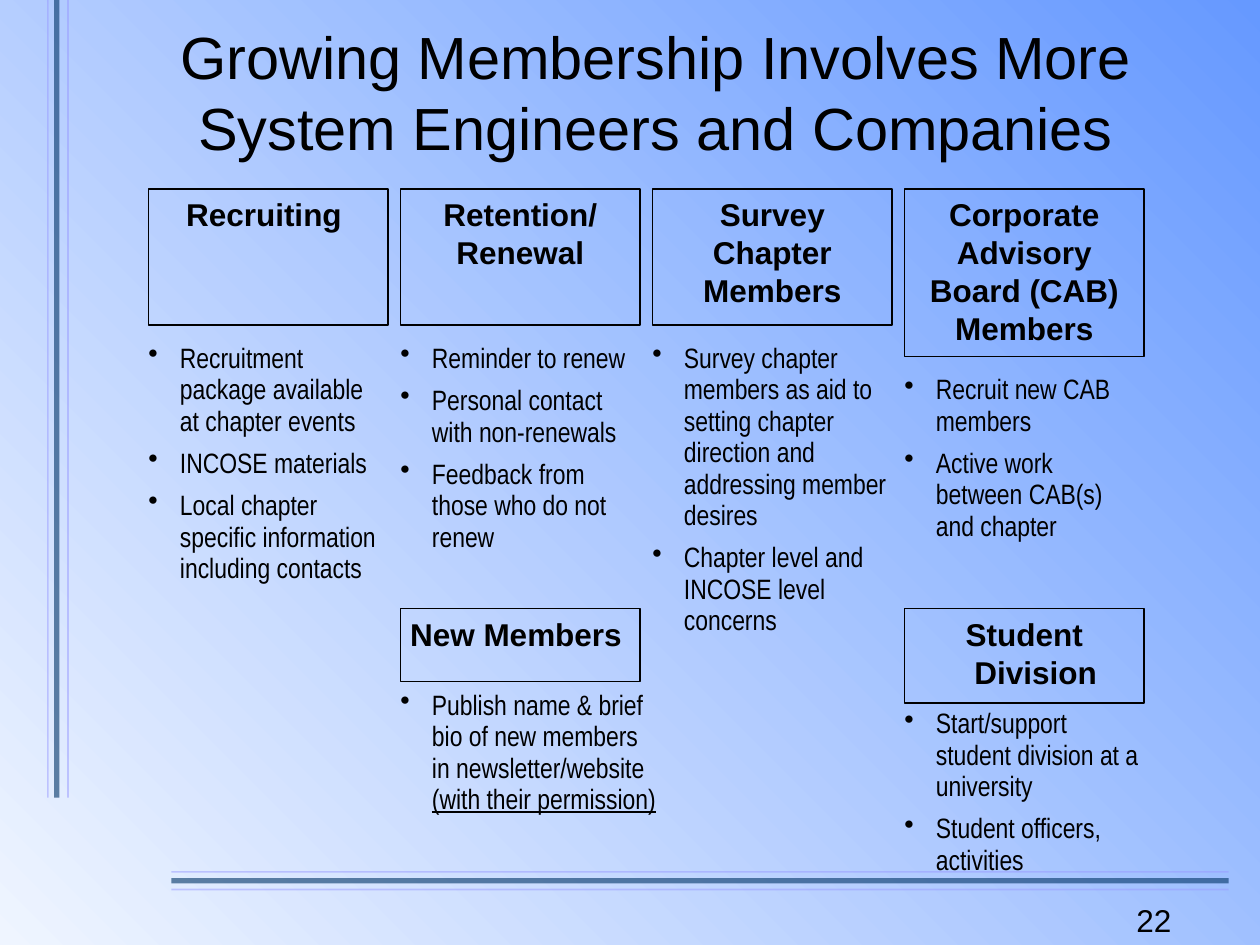
from lxml.etree import SubElement
from pptx import Presentation
from pptx.dml.color import RGBColor
from pptx.enum.shapes import MSO_CONNECTOR, MSO_SHAPE
from pptx.enum.text import MSO_ANCHOR, MSO_AUTO_SIZE, PP_ALIGN
from pptx.oxml.ns import qn
from pptx.util import Inches, Pt

TITLE = "Growing Membership Involves More System Engineers and Companies"
PAGE_NUMBER = "22"
BLACK = "000000"
PALE, DARK = ("9999FF", 1, 50), ("003366", 3, 60)
RULES = [
    ((0.38, 0), (0.38, 6.33), PALE),
    ((0.54, 0), (0.54, 6.33), PALE),
    ((0.45, 0), (0.45, 6.33), DARK),
    ((9.75, 7.06), (1.36, 7.06), PALE),
    ((9.75, 6.99), (1.36, 6.99), DARK),
    ((9.75, 6.92), (1.36, 6.92), PALE),
]
FIRST_LEFT, COLUMN_STEP, HEADING_WIDTH = 1.18, 2, 1.9
UPPER, LOWER = 1.5, 4.83
TOPICS = [
    dict(column=0, top=UPPER, height=1.08, heading="Recruiting ",
         list_top=2.67, list_size=(2.08, 2.04),
         points=[["Recruitment package available at chapter events"],
                 ["INCOSE materials"],
                 ["Local chapter specific information including contacts"]]),
    dict(column=1, top=UPPER, height=1.08, heading="Retention/ Renewal",
         list_top=2.67, list_size=(2.08, 1.78),
         points=[["Reminder to renew"],
                 ["Personal contact with non-renewals"],
                 ["Feedback from those who do not renew"]]),
    dict(column=2, top=UPPER, height=1.08, heading="Survey Chapter Members",
         list_top=2.67, list_size=(2.08, 2.43),
         points=[["Survey chapter members as aid to setting chapter direction "
                  "and addressing member desires"],
                 ["Chapter level and INCOSE level concerns"]]),
    dict(column=3, top=UPPER, height=1.33,
         heading="Corporate Advisory Board (CAB) Members",
         list_top=2.92, list_size=(2.08, 1.43),
         points=[["Recruit new CAB members"],
                 ["Active work between CAB(s) and chapter"]]),
    dict(column=1, top=LOWER, height=0.58, heading="New Members ",
         list_top=5.42, list_size=(2.25, 1.11),
         points=[["Publish name & brief bio of new members in newsletter/website ",
                  "(with their permission)"]]),
    dict(column=3, top=LOWER, height=0.75, heading="Student Division ",
         list_top=5.57, list_size=(2.08, 1.43),
         points=[["Start/support student division at a university"],
                 ["Student officers, activities"]]),
]


def rgb(value):
    """Turn a hex string into a colour."""
    return RGBColor.from_string(value)


def style(font, size, name="Arial", bold=False):
    """Set the look of a run."""
    font.size, font.name, font.bold = Pt(size), name, bold
    font.color.rgb = rgb(BLACK)


def hang(paragraph):
    """Give a paragraph a hanging indent."""
    properties = paragraph._p.get_or_add_pPr()
    properties.set("marL", str(Inches(0.25)))
    properties.set("indent", str(-Inches(0.25)))
    return properties


def add_rule(slide, start, end, pen):
    """Draw one translucent border line."""
    color, width, opacity = pen
    rule = slide.shapes.add_connector(
        MSO_CONNECTOR.STRAIGHT, *map(Inches, start + end))
    rule.line.color.rgb = rgb(color)
    rule.line.width = Pt(width)
    tint = rule._element.spPr.find(".//" + qn("a:srgbClr"))
    SubElement(tint, qn("a:alpha"), val=str(opacity * 1000))
    SubElement(rule._element.spPr, qn("a:effectLst"))


def add_text(slide, place, text, size):
    """Add a wrapping text box with one paragraph."""
    frame = slide.shapes.add_textbox(*map(Inches, place)).text_frame
    frame.word_wrap = True
    frame.text = text
    style(frame.paragraphs[0].runs[0].font, size)
    return frame


def add_heading(slide, place, text, hanging):
    """Add an outlined heading box."""
    heading = slide.shapes.add_shape(MSO_SHAPE.RECTANGLE, *map(Inches, place))
    heading.shadow.inherit = False
    heading.fill.background()
    heading.line.color.rgb = rgb(BLACK)
    heading.line.width = Pt(0.75)
    frame = heading.text_frame
    frame.word_wrap = True
    frame.vertical_anchor = MSO_ANCHOR.TOP
    frame.margin_left = frame.margin_right = Inches(0.05)
    frame.margin_top = frame.margin_bottom = Inches(0.05)
    frame.text = text
    paragraph = frame.paragraphs[0]
    paragraph.alignment = PP_ALIGN.CENTER
    if hanging:
        hang(paragraph)
    style(paragraph.runs[0].font, 18, bold=True)


def add_points(slide, place, points):
    """Add a bulleted list whose second runs are underlined."""
    frame = slide.shapes.add_textbox(*map(Inches, place)).text_frame
    frame.word_wrap = True
    frame.auto_size = MSO_AUTO_SIZE.SHAPE_TO_FIT_TEXT
    for index, parts in enumerate(points):
        paragraph = frame.add_paragraph() if index else frame.paragraphs[0]
        paragraph.line_spacing = Pt(18)
        paragraph.space_after = Pt(6)
        SubElement(hang(paragraph), qn("a:buChar"), char="•")
        for position, part in enumerate(parts):
            run = paragraph.add_run()
            run.text = part
            style(run.font, 16, "Arial Narrow")
            if position:
                run.font.underline = True


def main():
    """Build the membership slide."""
    deck = Presentation()
    deck.slide_width, deck.slide_height = Inches(10), Inches(7.5)
    slide = deck.slides.add_slide(deck.slide_layouts[6])
    backdrop = slide.background.fill
    backdrop.gradient()
    backdrop.gradient_angle = 45
    for stop, color in zip(backdrop.gradient_stops, ("EFF5FF", "6699FF")):
        stop.color.rgb = rgb(color)

    for start, end, pen in RULES:
        add_rule(slide, start, end, pen)
    add_text(slide, (8.92, 7.1, 0.67, 0.4), PAGE_NUMBER, 18)
    title = add_text(slide, (0.83, 0.67, 8.75, 0.67), TITLE, 34)
    title.vertical_anchor = MSO_ANCHOR.BOTTOM
    title.paragraphs[0].alignment = PP_ALIGN.CENTER

    for topic in TOPICS:
        left = FIRST_LEFT + COLUMN_STEP * topic["column"]
        add_heading(slide, (left, topic["top"], HEADING_WIDTH, topic["height"]),
                    topic["heading"], topic["top"] == LOWER)
        add_points(slide, (left - 0.1, topic["list_top"], *topic["list_size"]),
                   topic["points"])
    deck.save("out.pptx")


if __name__ == "__main__":
    main()
